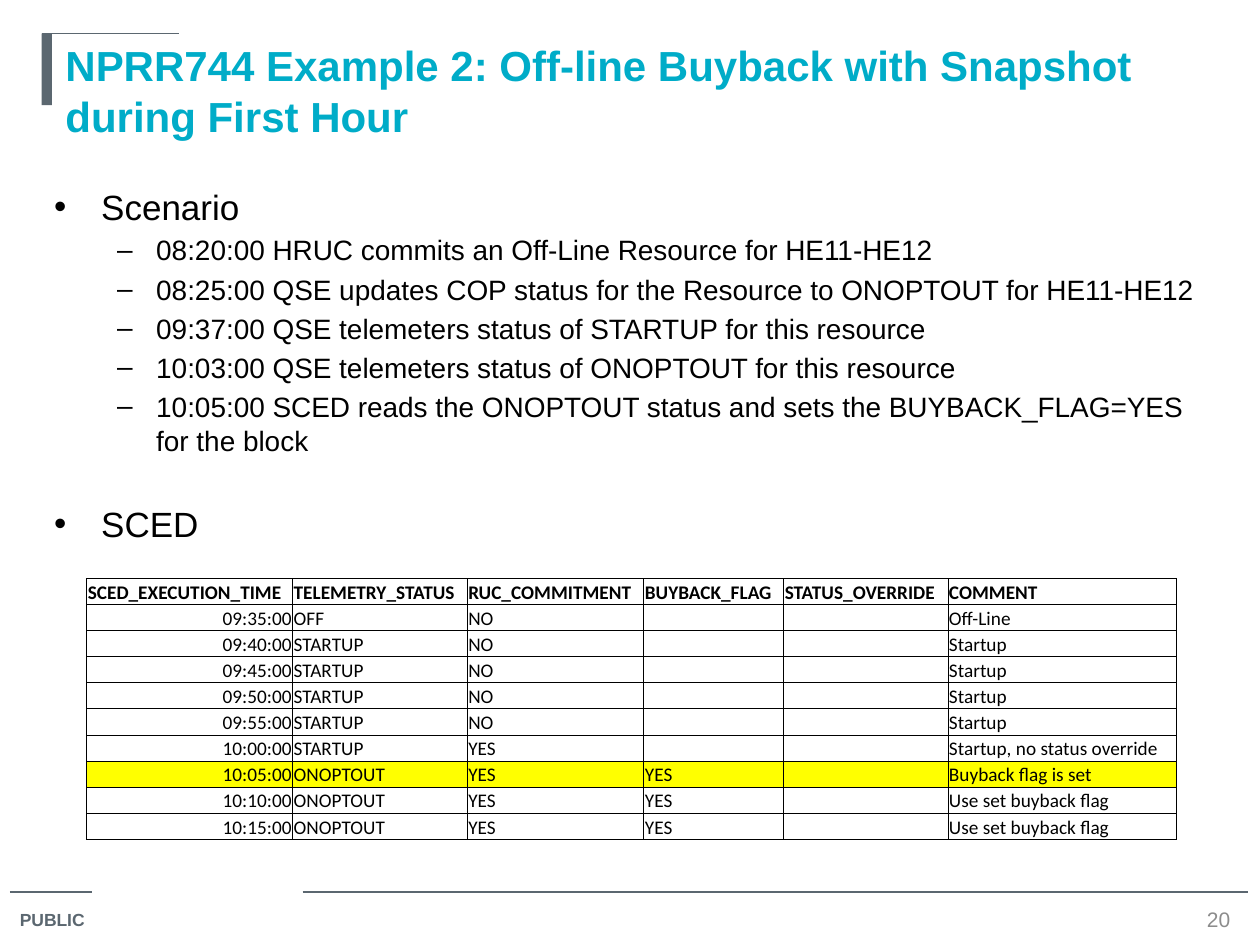
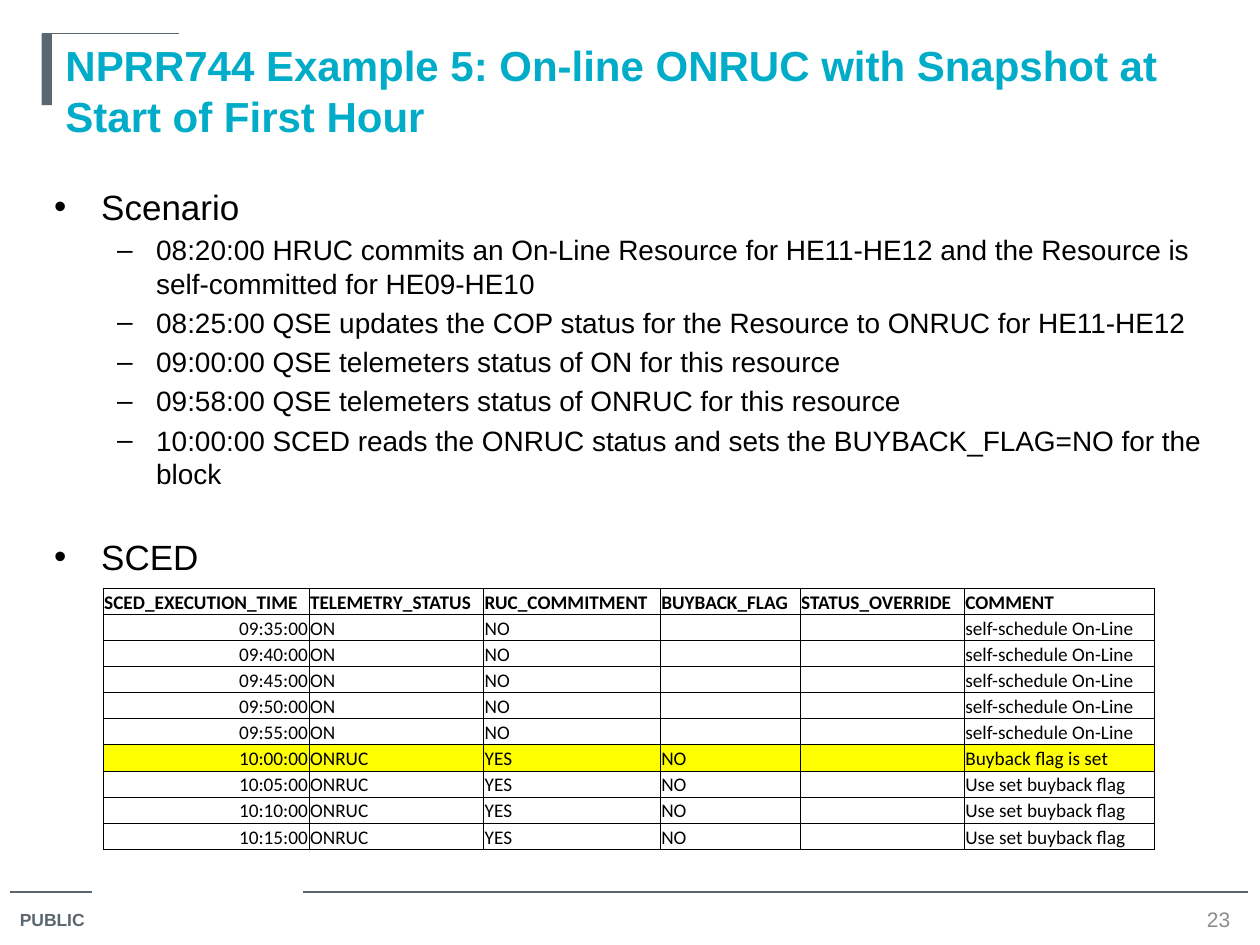
from lxml.etree import SubElement
from pptx import Presentation
from pptx.dml.color import RGBColor
from pptx.enum.shapes import MSO_CONNECTOR, MSO_SHAPE
from pptx.enum.text import MSO_ANCHOR, PP_ALIGN
from pptx.oxml.ns import qn
from pptx.util import Cm, Pt

SLATE = RGBColor(0x5B, 0x67, 0x70)
TEAL = RGBColor(0x00, 0xAC, 0xC8)
GREY = RGBColor(0x8C, 0x8C, 0x8C)
BLACK = RGBColor(0x00, 0x00, 0x00)
WHITE = RGBColor(0xFF, 0xFF, 0xFF)
YELLOW = RGBColor(0xFF, 0xFF, 0x00)

HEADERS = ["SCED_EXECUTION_TIME", "TELEMETRY_STATUS", "RUC_COMMITMENT",
           "BUYBACK_FLAG", "STATUS_OVERRIDE", "COMMENT"]
COLUMN_WIDTHS = [4.15, 3.52, 3.56, 2.82, 3.31]  # the comment column varies
TABLE_HEIGHT = 5.27
FIRST_RUN = 9 * 60 + 35  # minutes after midnight
RUN_INTERVAL = 5


class Deck:
    """Shared style plus the slide being built; lengths are in centimetres."""

    def __init__(self):
        self.prs = Presentation()
        self.prs.slide_width, self.prs.slide_height = Cm(25.4), Cm(19.05)
        self.s = None

    def new_slide(self, title, number):
        self.s = self.prs.slides.add_slide(self.prs.slide_layouts[6])
        # Footer
        self.line(0.2, 17.98, 1.85)
        self.line(6.1, 17.98, 25.15)
        self.text("PUBLIC", 0.15, 18.21, 1.96, 0.71, 10, SLATE, bold=True)
        # Title with its corner mark
        self.bar(0.84, 0.68, 0.21, 1.44)
        self.line(0.84, 0.68, 3.6)
        self.text(title, 1.07, 0.68, 23.5, 3.18, 24, TEAL, bold=True)
        # Page number
        tf = self.text(str(number), 23.93, 18.24, 1.27, 0.58, 12, GREY)
        tf.vertical_anchor = MSO_ANCHOR.MIDDLE
        tf.paragraphs[0].alignment = PP_ALIGN.CENTER

    def line(self, x1, y, x2):
        sp = self.s.shapes.add_connector(
            MSO_CONNECTOR.STRAIGHT, Cm(x1), Cm(y), Cm(x2), Cm(y))
        sp.line.color.rgb = SLATE
        sp.line.width = Pt(0.75)
        SubElement(sp._element.spPr, qn("a:effectLst"))

    def bar(self, x, y, w, h):
        sp = self.s.shapes.add_shape(
            MSO_SHAPE.RECTANGLE, Cm(x), Cm(y), Cm(w), Cm(h))
        sp.shadow.inherit = False
        sp.fill.solid()
        sp.fill.fore_color.rgb = SLATE
        sp.line.fill.background()

    def run(self, p, text, size, color=BLACK, bold=False, font="Arial"):
        r = p.add_run()
        r.text = text
        r.font.name, r.font.size, r.font.bold = font, Pt(size), bold
        r.font.color.rgb = color

    def frame(self, x, y, w, h):
        tf = self.s.shapes.add_textbox(Cm(x), Cm(y), Cm(w), Cm(h)).text_frame
        tf.word_wrap = True
        return tf

    def text(self, text, x, y, w, h, size, color, bold=False):
        tf = self.frame(x, y, w, h)
        self.run(tf.paragraphs[0], text, size, color, bold)
        return tf

    def bullet(self, p, text, mark, size, margin, hanging, before):
        pPr = p._p.get_or_add_pPr()
        pPr.set("marL", str(Cm(margin)))
        pPr.set("indent", str(-Cm(hanging)))
        SubElement(pPr, qn("a:buFont"), typeface="Arial")
        SubElement(pPr, qn("a:buChar"), char=mark)
        p.space_before = Pt(before)
        self.run(p, text, size)

    def outline(self, events):
        """Scenario events between the two section headings."""
        tf = self.frame(0.84, 3.61, 23.71, 7.77)
        self.bullet(tf.paragraphs[0], "Scenario", "•", 20, 0.95, 0.95, 0)
        for event in events:
            self.bullet(tf.add_paragraph(), event, "–", 16, 2.06, 0.79, 3.2)
        self.bullet(tf.add_paragraph(), "SCED", "•", 20, 0.95, 0.95, 26)

    def cell(self, cell, text, fill, bold, align):
        cell.margin_left = cell.margin_right = cell.margin_top = Cm(0.02)
        cell.margin_bottom = 0
        cell.vertical_anchor = MSO_ANCHOR.BOTTOM
        p = cell.text_frame.paragraphs[0]
        p.alignment = align
        if text:
            self.run(p, text, 11, bold=bold, font="Calibri")
        else:
            SubElement(p._p, qn("a:endParaRPr"), sz="1100")
        # Borders come before the fill in the cell properties
        tcPr = cell._tc.get_or_add_tcPr()
        for side in ("lnL", "lnR", "lnT", "lnB"):
            ln = SubElement(tcPr, qn(f"a:{side}"), w=str(Pt(0.5)))
            solid = SubElement(ln, qn("a:solidFill"))
            SubElement(solid, qn("a:srgbClr"), val=str(BLACK))
        cell.fill.solid()
        cell.fill.fore_color.rgb = fill

    def sced_table(self, x, y, comment_width, runs, flag_set):
        """One row per SCED run; the run that sets the flag is highlighted."""
        rows = [HEADERS]
        for i, (status, ruc, flag, comment) in enumerate(runs):
            hour, minute = divmod(FIRST_RUN + i * RUN_INTERVAL, 60)
            time = f"{hour:02}:{minute:02}:00"
            rows.append([time, status, ruc, flag, "", comment])
        widths = COLUMN_WIDTHS + [comment_width]
        table = self.s.shapes.add_table(
            len(rows), len(widths), Cm(x), Cm(y),
            Cm(sum(widths)), Cm(TABLE_HEIGHT)).table
        table.first_row = table.horz_banding = False
        for column, width in zip(table.columns, widths):
            column.width = Cm(width)
        for i, row in enumerate(rows):
            fill = YELLOW if row[0] == flag_set else WHITE
            for j, value in enumerate(row):
                align = PP_ALIGN.RIGHT if i and j == 0 else PP_ALIGN.LEFT
                self.cell(table.cell(i, j), value, fill, i == 0, align)


def main():
    deck = Deck()

    # Example 2
    deck.new_slide("NPRR744 Example 2: Off-line Buyback with Snapshot "
                   "during First Hour", 20)
    deck.outline([
        "08:20:00 HRUC commits an Off-Line Resource for HE11-HE12",
        "08:25:00 QSE updates COP status for the Resource to ONOPTOUT "
        "for HE11-HE12",
        "09:37:00 QSE telemeters status of STARTUP for this resource",
        "10:03:00 QSE telemeters status of ONOPTOUT for this resource",
        "10:05:00 SCED reads the ONOPTOUT status and sets the "
        "BUYBACK_FLAG=YES for the block",
    ])
    runs = [("OFF", "NO", "", "Off-Line")]
    runs += [("STARTUP", "NO", "", "Startup")] * 4
    runs += [("STARTUP", "YES", "", "Startup, no status override"),
             ("ONOPTOUT", "YES", "YES", "Buyback flag is set")]
    runs += [("ONOPTOUT", "YES", "YES", "Use set buyback flag")] * 2
    deck.sced_table(1.75, 11.66, 4.6, runs, "10:05:00")

    # Example 5
    deck.new_slide("NPRR744 Example 5: On-line ONRUC with Snapshot at "
                   "Start of First Hour", 23)
    deck.outline([
        "08:20:00 HRUC commits an On-Line Resource for HE11-HE12 and the "
        "Resource is self-committed for HE09-HE10",
        "08:25:00 QSE updates the COP status for the Resource to ONRUC "
        "for HE11-HE12",
        "09:00:00 QSE telemeters status of ON for this resource",
        "09:58:00 QSE telemeters status of ONRUC for this resource",
        "10:00:00 SCED reads the ONRUC status and sets the "
        "BUYBACK_FLAG=NO for the block",
    ])
    runs = [("ON", "NO", "", "self-schedule On-Line")] * 5
    runs += [("ONRUC", "YES", "NO", "Buyback flag is set")]
    runs += [("ONRUC", "YES", "NO", "Use set buyback flag")] * 3
    deck.sced_table(2.08, 11.86, 3.84, runs, "10:00:00")

    deck.prs.save("out.pptx")


if __name__ == "__main__":
    main()
